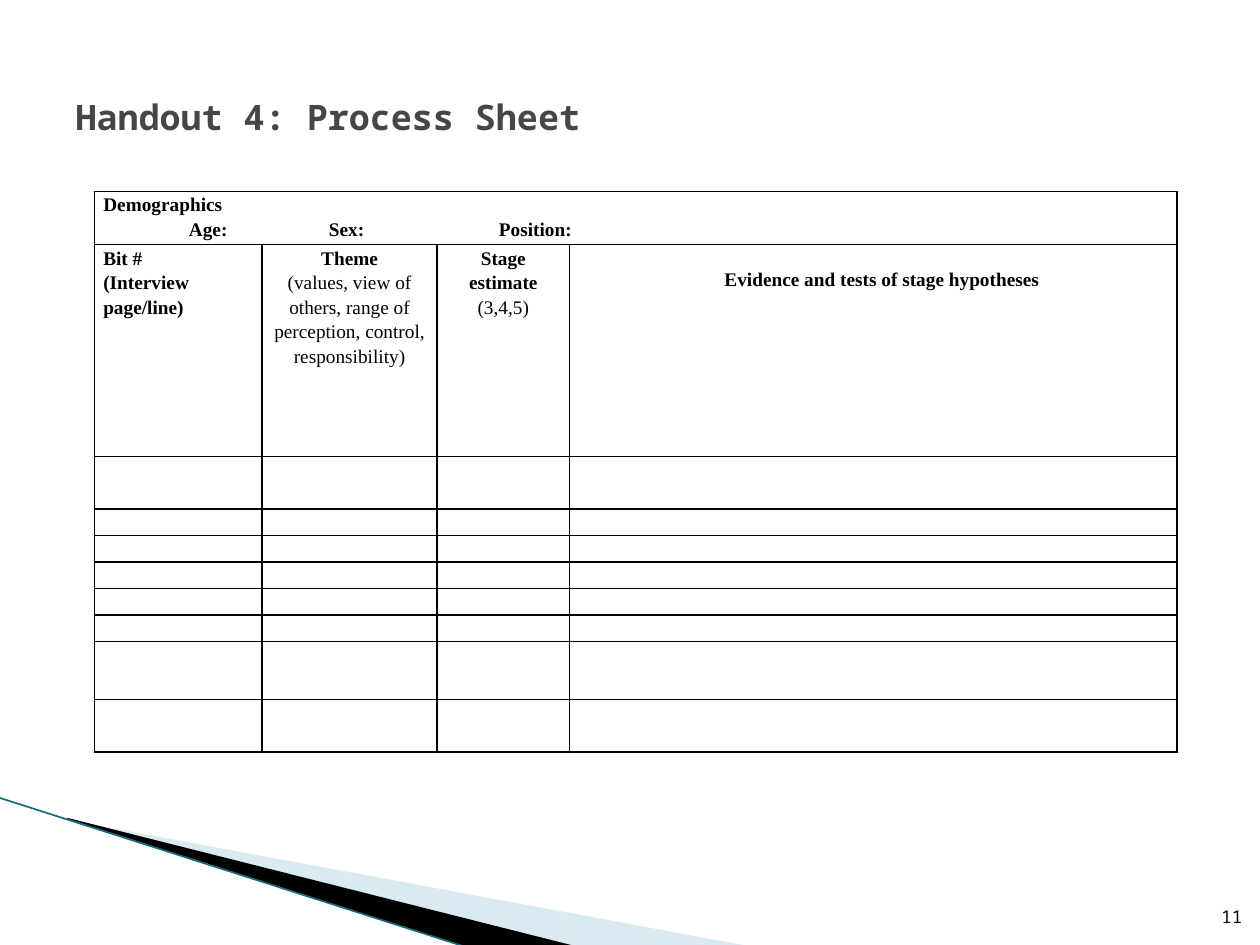
import pptx
import pptx.dml.color
import pptx.enum.shapes
import pptx.enum.text
import pptx.oxml.ns
import pptx.util
from lxml import etree

Inches = pptx.util.Inches
Pt = pptx.util.Pt
qn = pptx.oxml.ns.qn
Align = pptx.enum.text.PP_ALIGN
Anchor = pptx.enum.text.MSO_ANCHOR

HEADING_FONT = "Noto Sans Mono"
TABLE_FONT = "Times New Roman"
TITLE = "Handout 4: Process Sheet"
PAGE_NUMBER = "11"

DEMOGRAPHICS = [("Demographics", True), ("\tAge:\tSex:\tPosition:", True)]
DEMOGRAPHIC_TABS = [0.68, 1.79, 3.14]
HEADERS = [
    (Align.LEFT, 0, 0, [("Bit #", True), ("(Interview page/line)", True)]),
    (Align.CENTER, 0, 0, [
        ("Theme", True),
        ("(values, view of others, range of perception, control, responsibility)", False),
    ]),
    (Align.CENTER, 0, 0, [("Stage estimate", True), ("(3,4,5)", False)]),
    (Align.CENTER, 0.17, 0.14, [("Evidence and tests of stage hypotheses", True)]),
]
COLUMN_WIDTHS = [1.33, 1.39, 1.05, 4.82]
ROW_HEIGHTS = [0.42, 1.68, 0.42] + [0.21] * 5 + [0.46, 0.42]

WEDGES = [
    ([(0.55, 6.51), (5.95, 7.51), (4.56, 7.51), (0.55, 6.5)], "A0CBDC", 40),
    ([(0.53, 6.49), (4.57, 7.51), (3.72, 7.52), (0.54, 6.5)], "000000", 100),
]


def color(value):
    return pptx.dml.color.RGBColor.from_string(value)


def add_run(paragraph, text, font_name, size, bold=False, shade="000000"):
    run = paragraph.add_run()
    run.text = text
    run.font.name = font_name
    run.font.size = Pt(size)
    run.font.bold = bold
    run.font.color.rgb = color(shade)


def add_wedge(slide, points, shade, opacity):
    corners = [(Inches(x), Inches(y)) for x, y in points]
    builder = slide.shapes.build_freeform(*corners[0], scale=1.0)
    builder.add_line_segments(corners[1:], close=True)
    shape = builder.convert_to_shape()
    shape.shadow.inherit = False
    shape.fill.solid()
    shape.fill.fore_color.rgb = color(shade)
    shape.line.fill.background()
    if opacity < 100:
        fill_color = shape.fill._xPr.find(".//" + qn("a:srgbClr"))
        etree.SubElement(fill_color, qn("a:alpha"), val=str(opacity * 1000))


def add_edge_line(slide):
    connector = slide.shapes.add_connector(
        pptx.enum.shapes.MSO_CONNECTOR.STRAIGHT,
        Inches(-0.01), Inches(6.33), Inches(3.71), Inches(7.52),
    )
    connector.line.color.rgb = color("16697F")
    connector.line.width = Pt(0.95)
    etree.SubElement(connector._element.spPr, qn("a:effectLst"))


def format_cell(cell):
    cell.margin_left = cell.margin_right = Inches(0.07)
    cell.margin_top = cell.margin_bottom = 0
    cell.fill.background()
    properties = cell._tc.get_or_add_tcPr()
    for index, side in enumerate(("lnL", "lnR", "lnT", "lnB")):
        border = etree.Element(qn("a:" + side), w=str(Pt(1)))
        fill = etree.SubElement(border, qn("a:solidFill"))
        etree.SubElement(fill, qn("a:srgbClr"), val="000000")
        properties.insert(index, border)


def fill_cell(cell, lines, alignment=Align.LEFT, tabs=()):
    frame = cell.text_frame
    for index, (text, bold) in enumerate(lines):
        paragraph = frame.add_paragraph() if index else frame.paragraphs[0]
        paragraph.alignment = alignment
        paragraph.line_spacing = 1.15
        if "\t" in text:
            tab_list = etree.SubElement(paragraph._p.get_or_add_pPr(), qn("a:tabLst"))
            for position in tabs:
                etree.SubElement(tab_list, qn("a:tab"), pos=str(Inches(position)), algn="l")
        add_run(paragraph, text, TABLE_FONT, 11, bold)


def add_process_table(slide):
    frame = slide.shapes.add_table(
        len(ROW_HEIGHTS), len(COLUMN_WIDTHS), Inches(0.75), Inches(1.52),
        Inches(sum(COLUMN_WIDTHS)), Inches(sum(ROW_HEIGHTS)),
    )
    table = frame.table
    table.first_row = table.horz_banding = False
    for column, width in zip(table.columns, COLUMN_WIDTHS):
        column.width = Inches(width)
    for row, height in zip(table.rows, ROW_HEIGHTS):
        row.height = Inches(height)
        for cell in row.cells:
            format_cell(cell)
            paragraph = cell.text_frame.paragraphs[0]
            etree.SubElement(paragraph._p, qn("a:endParaRPr"), sz="1000")
    table.cell(0, 0).merge(table.cell(0, len(COLUMN_WIDTHS) - 1))
    fill_cell(table.cell(0, 0), DEMOGRAPHICS, tabs=DEMOGRAPHIC_TABS)
    for index, (alignment, top, indent, lines) in enumerate(HEADERS):
        cell = table.cell(1, index)
        cell.margin_top = Inches(top)
        cell.margin_left = Inches(0.07 + indent)
        fill_cell(cell, lines, alignment)


def add_title(slide):
    title = slide.shapes.title
    title.left, title.top = Inches(0.5), Inches(0.3)
    title.width, title.height = Inches(9), Inches(1.25)
    title.text_frame.vertical_anchor = Anchor.MIDDLE
    paragraph = title.text_frame.paragraphs[0]
    paragraph.alignment = Align.LEFT
    add_run(paragraph, TITLE, HEADING_FONT, 20, True, "464646")


def add_page_number(slide):
    box = slide.shapes.add_textbox(Inches(9.46), Inches(7.01), Inches(0.4), Inches(0.4))
    frame = box.text_frame
    frame.word_wrap = True
    frame.vertical_anchor = Anchor.BOTTOM
    frame.margin_left = frame.margin_right = 0
    paragraph = frame.paragraphs[0]
    paragraph.alignment = Align.RIGHT
    add_run(paragraph, PAGE_NUMBER, HEADING_FONT, 10)


def main():
    presentation = pptx.Presentation()
    presentation.slide_width = Inches(10)
    presentation.slide_height = Inches(7.5)
    slide = presentation.slides.add_slide(presentation.slide_layouts[5])
    for points, shade, opacity in WEDGES:
        add_wedge(slide, points, shade, opacity)
    add_edge_line(slide)
    add_page_number(slide)
    add_title(slide)
    add_process_table(slide)
    presentation.save("out.pptx")


if __name__ == "__main__":
    main()
